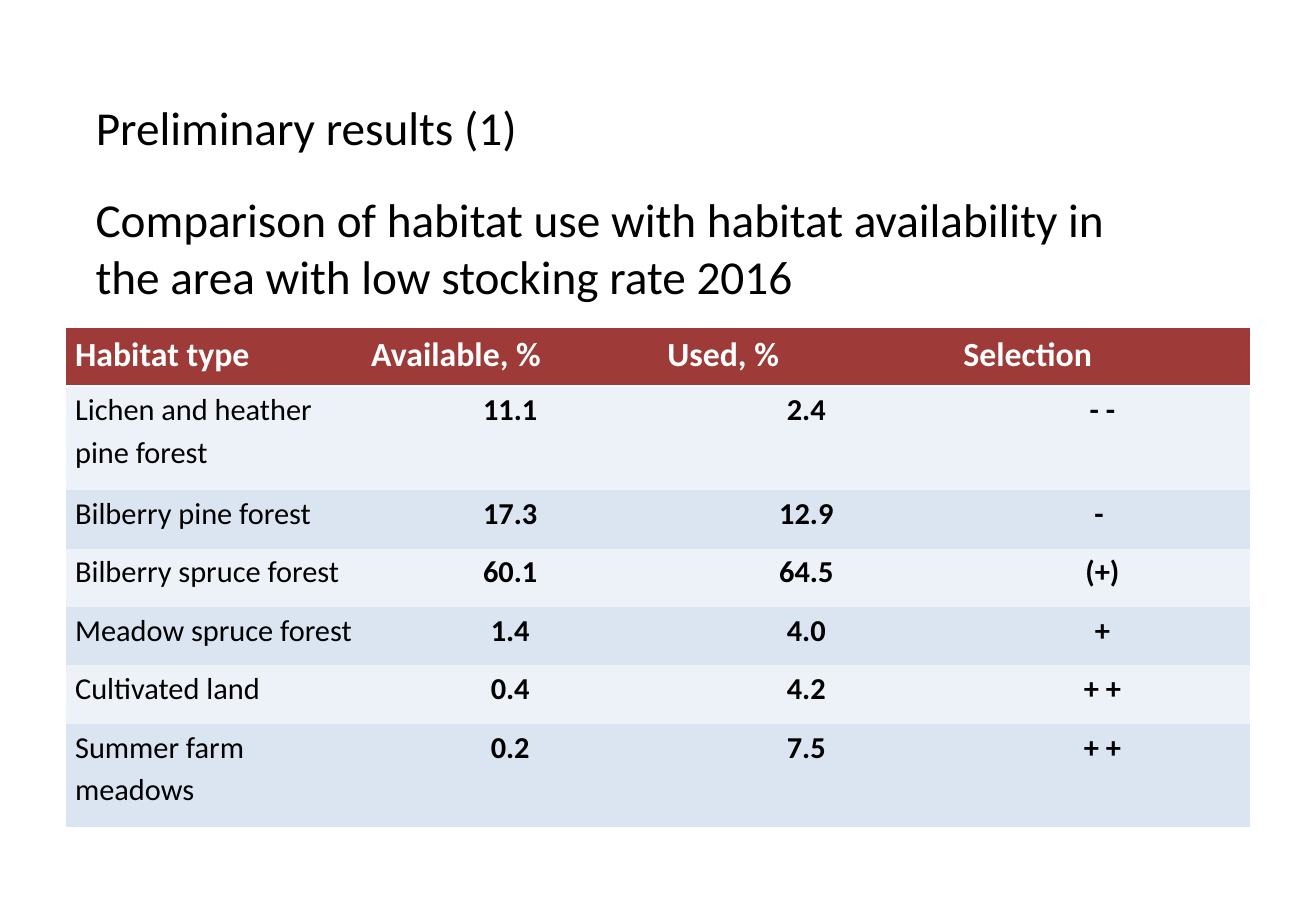
from typing import NamedTuple

from lxml import etree
from pptx import Presentation
from pptx.dml.color import RGBColor
from pptx.enum import text as t
from pptx.oxml import ns
from pptx.util import Cm, Pt

FONT = "Calibri"
BLACK = RGBColor(0, 0, 0)
WHITE = RGBColor(255, 255, 255)
RED = RGBColor(0x9E, 0x3A, 0x38)
PALE = RGBColor(0xED, 0xF2, 0xF8)
BLUE = RGBColor(0xDB, 0xE5, 0xF1)
LOW, TALL = Cm(1.22), Cm(2.17)


class Habitat(NamedTuple):
    name: str
    share: str
    used: str
    choice: str
    height: int = LOW


HEAD = Habitat("Habitat type", "Available, %", "Used, %", "Selection")
ROWS = [
    Habitat("Lichen and heather pine forest", "11.1", "2.4", "- -", TALL),
    Habitat("Bilberry pine forest", "17.3", "12.9", "- "),
    Habitat("Bilberry spruce forest", "60.1", "64.5", "(+)"),
    Habitat("Meadow spruce forest", "1.4", "4.0", "+"),
    Habitat("Cultivated land", "0.4", "4.2", "+ +"),
    Habitat("Summer farm meadows", "0.2", "7.5", "+ +", TALL),
]


def style(para, size: float, color: RGBColor, bold: bool = False) -> None:
    for run in para.runs:
        font = run.font
        font.name, font.size, font.bold = FONT, Pt(size), bold
        font.color.rgb = color


def write(shape, lines: str) -> None:
    """Fill a heading shape with left-aligned 28 pt lines."""
    frame = shape.text_frame
    frame.text = lines
    frame.word_wrap = False
    frame.auto_size = t.MSO_AUTO_SIZE.SHAPE_TO_FIT_TEXT
    frame.vertical_anchor = t.MSO_ANCHOR.TOP
    for para in frame.paragraphs:
        para.alignment = t.PP_ALIGN.LEFT
        style(para, 28, BLACK)


def edge(cell, white: str) -> None:
    """Draw only the named side (T or B) of a cell, in white."""
    props = cell._tc.get_or_add_tcPr()
    for spot, side in enumerate("LRTB"):
        line = etree.Element(ns.qn("a:ln" + side), w=str(Pt(1.5)))
        if side == white:
            fill = etree.SubElement(line, ns.qn("a:solidFill"))
            etree.SubElement(fill, ns.qn("a:srgbClr"), val=str(WHITE))
        else:
            etree.SubElement(line, ns.qn("a:noFill"))
        props.insert(spot, line)


def fill_row(table, row: int, item: Habitat) -> None:
    table.rows[row].height = item.height
    head = row == 0
    tint = RED if head else PALE if row % 2 else BLUE
    for col, words in enumerate(item[:4]):
        cell = table.cell(row, col)
        cell.margin_left = cell.margin_right = Cm(0.19)
        cell.margin_top = cell.margin_bottom = 0
        cell.fill.solid()
        cell.fill.fore_color.rgb = tint
        edge(cell, {0: "B", 1: "T"}.get(row, ""))
        para = cell.text_frame.paragraphs[0]
        para.text = words
        para.line_spacing = 1.15
        para.space_after = Pt(0 if col == 3 else 10)
        mid = not head and col > 0
        para.alignment = t.PP_ALIGN.CENTER if mid else t.PP_ALIGN.LEFT
        style(para, 20 if head else 18, WHITE if head else BLACK, head or mid)


def main() -> None:
    deck = Presentation()
    deck.slide_width, deck.slide_height = Cm(27.51), Cm(19.05)
    slide = deck.slides.add_slide(deck.slide_layouts[5])

    items = [HEAD, *ROWS]
    tall = sum(item.height for item in items)
    table = slide.shapes.add_table(
        len(items), 4, Cm(1.38), Cm(6.86), Cm(24.76), tall).table
    for row, item in enumerate(items):
        fill_row(table, row, item)

    title = slide.shapes.title
    title.left, title.top = Cm(1.75), Cm(1.93)
    title.width, title.height = Cm(9.4), Cm(1.45)
    write(title, "Preliminary results (1)")

    box = slide.shapes.add_textbox(Cm(1.75), Cm(3.86), Cm(22.05), Cm(2.64))
    write(box, "Comparison of habitat use with habitat availability in\n"
               "the area with low stocking rate 2016")
    deck.save("out.pptx")


if __name__ == "__main__":
    main()
